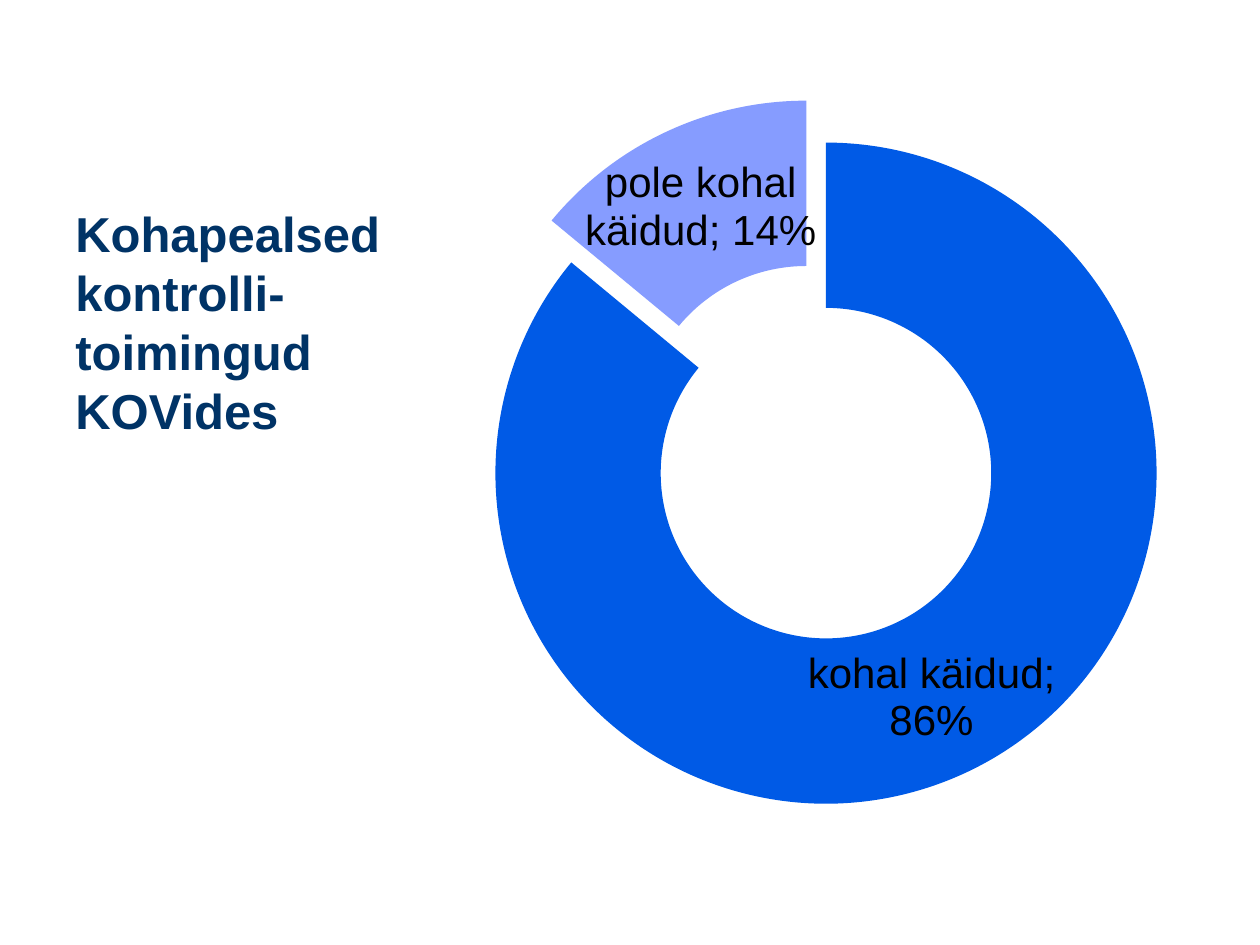
import pptx
import pptx.chart.data
import pptx.dml.color
import pptx.enum.chart
import pptx.util
from lxml import etree
from pptx.util import Inches

COLORS = {"visited": "005AE6", "unvisited": "869CFF", "heading": "003366", "label": "000000"}
FONT = "Arial"


def color(name):
    return pptx.dml.color.RGBColor.from_string(COLORS[name])


deck = pptx.Presentation()
deck.slide_width, deck.slide_height = Inches(10), Inches(7.5)
page = deck.slides.add_slide(deck.slide_layouts[6])

# Doughnut chart
data = pptx.chart.data.CategoryChartData(number_format="0%")
data.categories = ["kohal käidud", "pole kohal käidud"]
data.add_series("Series 1", (0.86, 0.14))
chart = page.shapes.add_chart(
    pptx.enum.chart.XL_CHART_TYPE.DOUGHNUT,
    Inches(3.43), Inches(0.3), Inches(6.07), Inches(6.4), data,
).chart
chart.has_legend = False
chart.has_title = False
chart.font.name = FONT
chart.font.size = pptx.util.Pt(18)
chart.font.color.rgb = color("label")

plot = chart.plots[0]
plot.vary_by_categories = True
series = plot.series[0]
for index, name in enumerate(("visited", "unvisited")):
    point_format = series.points[index].format
    point_format.fill.solid()
    point_format.fill.fore_color.rgb = color(name)
    point_format.line.fill.background()

# Labels with category and share
plot.has_data_labels = True
labels = plot.data_labels
labels.show_category_name = True
labels.show_value = True
labels.show_percentage = False
labels.show_legend_key = False
labels.number_format = "0%"
labels.number_format_is_linked = False
labels.font.name = FONT
labels.font.size = pptx.util.Pt(24)
labels.font.color.rgb = color("label")

# Separator, pulled-out slice, hole size and ring position
namespace = {"c": "http://schemas.openxmlformats.org/drawingml/2006/chart"}
chart_tag = "{%s}" % namespace["c"]
root = chart.element
separator = etree.Element(chart_tag + "separator")
separator.text = "; "
root.find(".//c:dLbls/c:showBubbleSize", namespace).addnext(separator)
slice_format = root.findall(".//c:dPt", namespace)[1].find("c:spPr", namespace)
slice_format.addprevious(etree.Element(chart_tag + "explosion", val="28"))
root.find(".//c:holeSize", namespace).set("val", "50")

plot_area = root.find(".//c:plotArea", namespace)
for old_layout in plot_area.findall("c:layout", namespace):
    plot_area.remove(old_layout)
layout = etree.Element(chart_tag + "layout")
plot_area.insert(0, layout)
manual = etree.SubElement(layout, chart_tag + "manualLayout")
for tag, value in (("layoutTarget", "inner"), ("xMode", "edge"), ("yMode", "edge"),
                   ("x", "0.08"), ("y", "0.13"), ("w", "0.87"), ("h", "0.82")):
    etree.SubElement(manual, chart_tag + tag, val=value)

# Heading
box = page.shapes.add_textbox(Inches(0.5), Inches(1.57), Inches(3.29), Inches(5.13))
frame = box.text_frame
frame.word_wrap = True
para = frame.paragraphs[0]
span = para.add_run()
span.text = "Kohapealsed kontrolli-toimingud KOVides"
span.font.name = FONT
span.font.size = pptx.util.Pt(28)
span.font.bold = True
span.font.color.rgb = color("heading")

deck.save("out.pptx")
